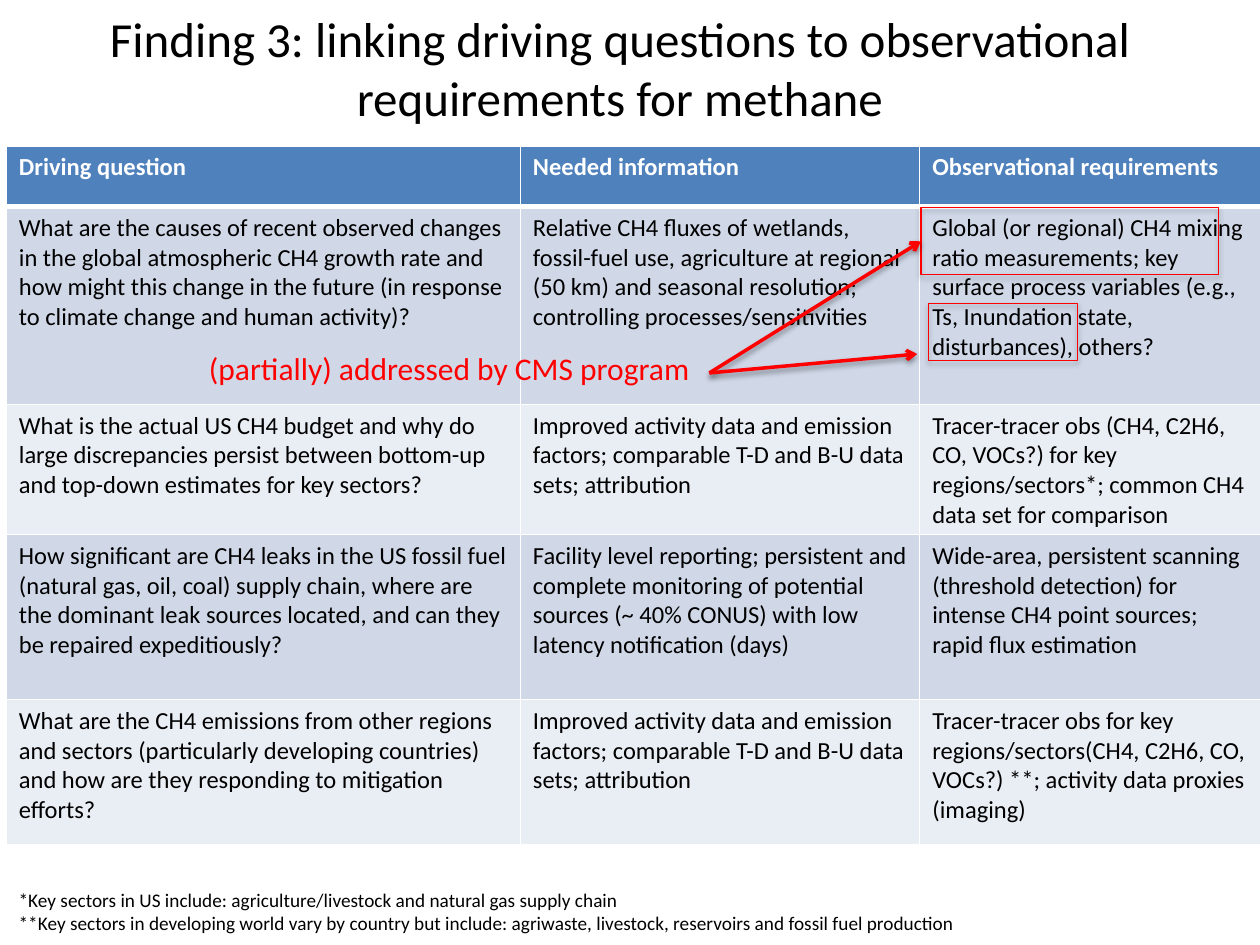
from lxml.etree import SubElement
from pptx import Presentation
from pptx.dml.color import RGBColor
from pptx.enum.shapes import MSO_CONNECTOR, MSO_SHAPE
from pptx.enum.text import PP_ALIGN
from pptx.oxml.ns import qn
from pptx.util import Inches, Pt

FONT = "Calibri"
BLACK, WHITE, RED = "000000", "FFFFFF", "FF0000"
HEADER, BANDS = "4F81BD", ("D0D8E8", "E9EDF4")
COLS = (4.08, 3.17, 2.71)
ROWS = (0.48, 1.57, 0.96, 1.31, 1.15)

ATTRIBUTION = ("Improved activity data and emission factors; comparable T-D and "
               "B-U data sets; attribution")
CELLS = (
    ("Driving question", "Needed information", "Observational requirements"),
    ("What are the causes of recent observed changes in the global atmospheric CH4 "
     "growth rate and how might this change in the future (in response to climate "
     "change and human activity)?",
     "Relative CH4 fluxes of wetlands, fossil-fuel use, agriculture at regional "
     "(50 km) and seasonal resolution; controlling processes/sensitivities",
     "Global (or regional) CH4 mixing ratio measurements; key surface process "
     "variables (e.g., Ts, Inundation state, disturbances), others?"),
    ("What is the actual US CH4 budget and why do large discrepancies persist "
     "between bottom-up and top-down estimates for key sectors?",
     ATTRIBUTION,
     "Tracer-tracer obs (CH4, C2H6, CO, VOCs?) for key regions/sectors*; common "
     "CH4 data set for comparison"),
    ("How significant are CH4 leaks in the US fossil fuel (natural gas, oil, coal) "
     "supply chain, where are the dominant leak sources located, and can they be "
     "repaired expeditiously?",
     "Facility level reporting; persistent and complete monitoring of potential "
     "sources (~ 40% CONUS) with low latency notification (days)",
     "Wide-area, persistent scanning (threshold detection) for intense CH4 point "
     "sources; rapid flux estimation"),
    ("What are the CH4 emissions from other regions and sectors (particularly "
     "developing countries) and how are they responding to mitigation efforts?",
     ATTRIBUTION,
     "Tracer-tracer obs for key regions/sectors(CH4, C2H6, CO, VOCs?) **; activity "
     "data proxies (imaging)"),
)
FOOTNOTES = (
    "*Key sectors in US include: agriculture/livestock and natural gas supply chain",
    "**Key sectors in developing world vary by country but include: agriwaste, "
    "livestock, reservoirs and fossil fuel production",
)


def rgb(color):
    return RGBColor.from_string(color)


def add_run(p, text, size, color, bold=False):
    r = p.add_run()
    r.text = text
    r.font.name, r.font.size, r.font.bold = FONT, Pt(size), bold
    r.font.color.rgb = rgb(color)


def add_text(s, box, lines, size, color, align=PP_ALIGN.LEFT, wrap=True):
    tf = s.shapes.add_textbox(*map(Inches, box)).text_frame
    tf.word_wrap = wrap
    for i, line in enumerate(lines):
        p = tf.paragraphs[0] if i == 0 else tf.add_paragraph()
        p.alignment = align
        add_run(p, line, size, color)


def add_shadow(sp, alpha):
    """Soft shadow falling straight down, alpha in percent."""
    effects = SubElement(sp._element.spPr, qn("a:effectLst"))
    shadow = SubElement(effects, qn("a:outerShdw"), blurRad=str(Pt(3.1)),
                        dist=str(Pt(1.8)), dir="5400000", rotWithShape="0")
    color = SubElement(shadow, qn("a:srgbClr"), val=BLACK)
    SubElement(color, qn("a:alpha"), val=str(alpha * 1000))


def add_border(cell, side, width):
    ln = SubElement(cell._tc.get_or_add_tcPr(), qn(f"a:ln{side}"), w=str(Pt(width)))
    fill = SubElement(ln, qn("a:solidFill"))
    SubElement(fill, qn("a:srgbClr"), val=WHITE)


def add_requirements_table(s, left, top):
    frame = s.shapes.add_table(len(ROWS), len(COLS), Inches(left), Inches(top),
                               Inches(sum(COLS)), Inches(sum(ROWS)))
    table = frame.table
    for column, width in zip(table.columns, COLS):
        column.width = Inches(width)
    for i, (row, height) in enumerate(zip(table.rows, ROWS)):
        row.height = Inches(height)
        head = i == 0
        for cell, text in zip(row.cells, CELLS[i]):
            for side in "LRTB":
                thick = (head and side == "B") or (i == 1 and side == "T")
                add_border(cell, side, 3 if thick else 1)
            cell.fill.solid()
            cell.fill.fore_color.rgb = rgb(HEADER if head else BANDS[(i - 1) % 2])
            add_run(cell.text_frame.paragraphs[0], text, 14,
                    WHITE if head else BLACK, head)


def add_highlight(s, box):
    sp = s.shapes.add_shape(MSO_SHAPE.RECTANGLE, *map(Inches, box))
    sp.fill.background()
    sp.line.color.rgb = rgb(RED)
    sp.line.width = Pt(0.75)
    add_shadow(sp, 35)
    return sp


def add_arrow(s, start, end):
    line = s.shapes.add_connector(MSO_CONNECTOR.STRAIGHT, *map(Inches, start + end))
    line.line.color.rgb = rgb(RED)
    line.line.width = Pt(2)
    SubElement(line.line._get_or_add_ln(), qn("a:tailEnd"), type="arrow")
    add_shadow(line, 38)
    return line


def main():
    prs = Presentation()
    prs.slide_width, prs.slide_height = Inches(10), Inches(7.5)
    s = prs.slides.add_slide(prs.slide_layouts[6])

    # Title, table and footnotes
    add_text(s, (0.17, 0.02, 9.5, 0.92),
             ["Finding 3: linking driving questions to observational requirements "
              "for methane"], 28, BLACK, PP_ALIGN.CENTER)
    add_requirements_table(s, 0.05, 1.16)
    add_text(s, (0.05, 7, 9.83, 0.5), FOOTNOTES, 11, BLACK)

    # Requirements covered by the program
    measurements = add_highlight(s, (7.31, 1.65, 2.36, 0.53))
    add_text(s, (1.56, 2.72, 4.07, 0.4), ["(partially) addressed by CMS program"],
             18, RED, wrap=False)
    add_highlight(s, (7.37, 2.41, 1.18, 0.45))

    # Arrows from the label to the highlights
    label_end = (5.63, 2.96)
    add_arrow(s, label_end, (7.31, 1.92)).end_connect(measurements, 1)
    add_arrow(s, label_end, (7.28, 2.81))

    prs.save("out.pptx")


if __name__ == "__main__":
    main()
